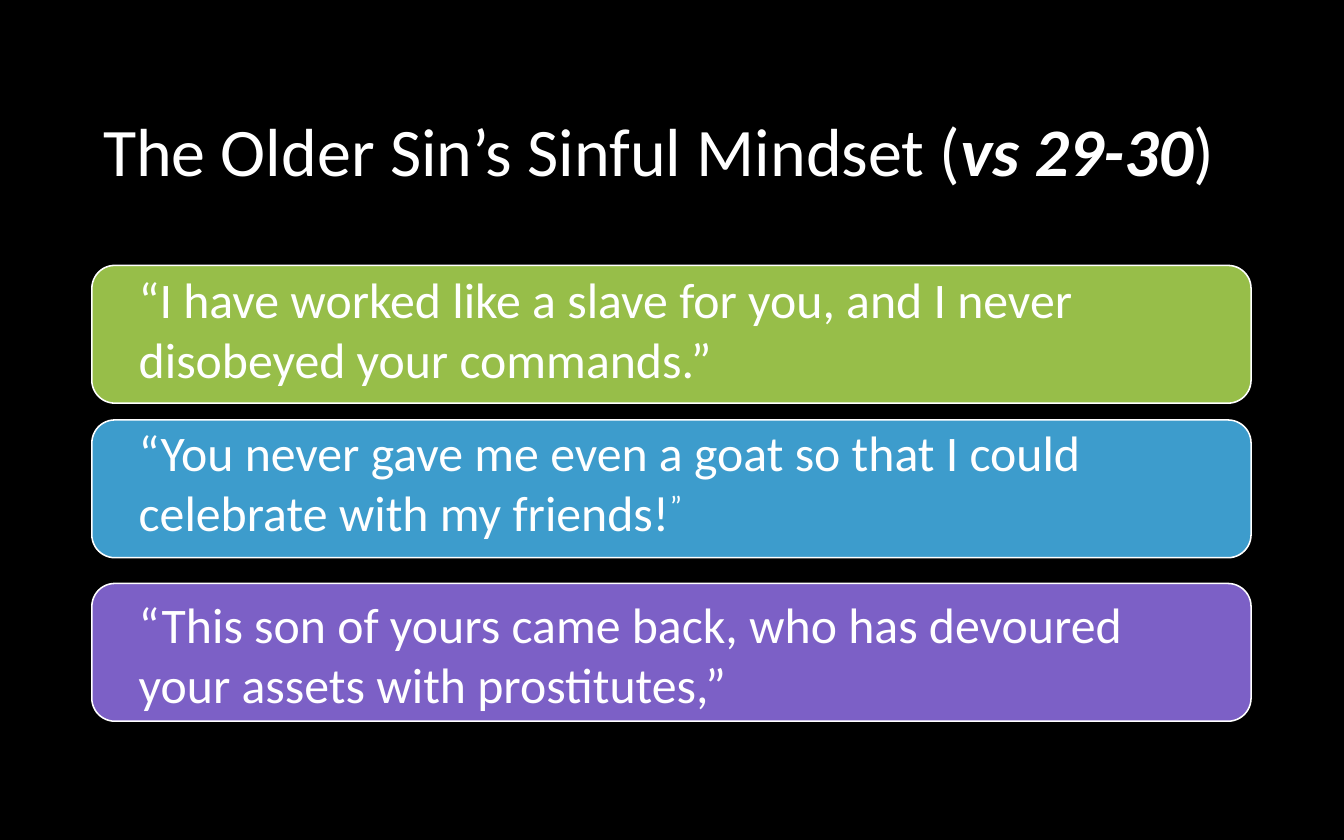
from pptx import Presentation
from pptx.dml.color import RGBColor
from pptx.enum.shapes import MSO_SHAPE
from pptx.enum.text import MSO_ANCHOR, MSO_AUTO_SIZE, PP_ALIGN
from pptx.util import Inches, Pt

COLOURS = {
    "background": "000000",
    "text": "FFFFFF",
    "green": "97BE49",
    "blue": "3D9CCC",
    "purple": "7C60C6",
}


def colour(name):
    return RGBColor.from_string(COLOURS[name])


def add_span(para, text, size):
    span = para.add_run()
    span.text = text
    span.font.name = "Calibri"
    span.font.size = Pt(size)
    span.font.color.rgb = colour("text")
    return span


deck = Presentation()
deck.slide_width = Inches(12)
deck.slide_height = Inches(7.5)
page = deck.slides.add_slide(deck.slide_layouts[5])
page.background.fill.solid()
page.background.fill.fore_color.rgb = colour("background")

# Title and bars share one column
margin = Inches(0.82)
column_width = Inches(10.35)
bar_height = Inches(1.23)
text_left = Inches(1.14)
text_height = Inches(1.18)

title = page.shapes.title
title.left, title.top = margin, Inches(0.73)
title.width, title.height = column_width, Inches(1.3)
title.text_frame.vertical_anchor = MSO_ANCHOR.MIDDLE
title.text_frame.auto_size = MSO_AUTO_SIZE.NONE
para = title.text_frame.paragraphs[0]
para.alignment = PP_ALIGN.LEFT
para.line_spacing = 0.9
for text, emphasis in (
    ("The Older Sin’s Sinful Mindset (", False),
    ("vs 29-30", True),
    (")", False),
):
    span = add_span(para, text, 43.7)
    span.font.bold = span.font.italic = emphasis

# Fill, bar top, text top, text width, quote, raised closing mark
quotes = [
    ("green", 2.37, 2.35, 9.72,
     "“I have worked like a slave for you, and I never disobeyed your commands.”", ""),
    ("blue", 3.75, 3.72, 9.41,
     "“You never gave me even a goat so that I could celebrate with my friends!", "”"),
    ("purple", 5.21, 5.25, 9.88,
     "“This son of yours came back, who has devoured your assets with prostitutes,”", ""),
]

bars = page.shapes.add_group_shape()
for fill, bar_top, text_top, text_width, quote, raised_mark in quotes:
    bar = bars.shapes.add_shape(
        MSO_SHAPE.ROUNDED_RECTANGLE, margin, Inches(bar_top), column_width, bar_height)
    bar.shadow.inherit = False
    bar.fill.solid()
    bar.fill.fore_color.rgb = colour(fill)
    bar.line.color.rgb = colour("text")
    bar.line.width = Pt(1)

    box = page.shapes.add_textbox(
        text_left, Inches(text_top), Inches(text_width), text_height)
    box.text_frame.word_wrap = True
    box.text_frame.auto_size = MSO_AUTO_SIZE.SHAPE_TO_FIT_TEXT
    para = box.text_frame.paragraphs[0]
    add_span(para, quote, 32)
    if raised_mark:
        span = add_span(para, raised_mark, 32)
        span._r.get_or_add_rPr().set("baseline", "30000")

deck.save("out.pptx")
